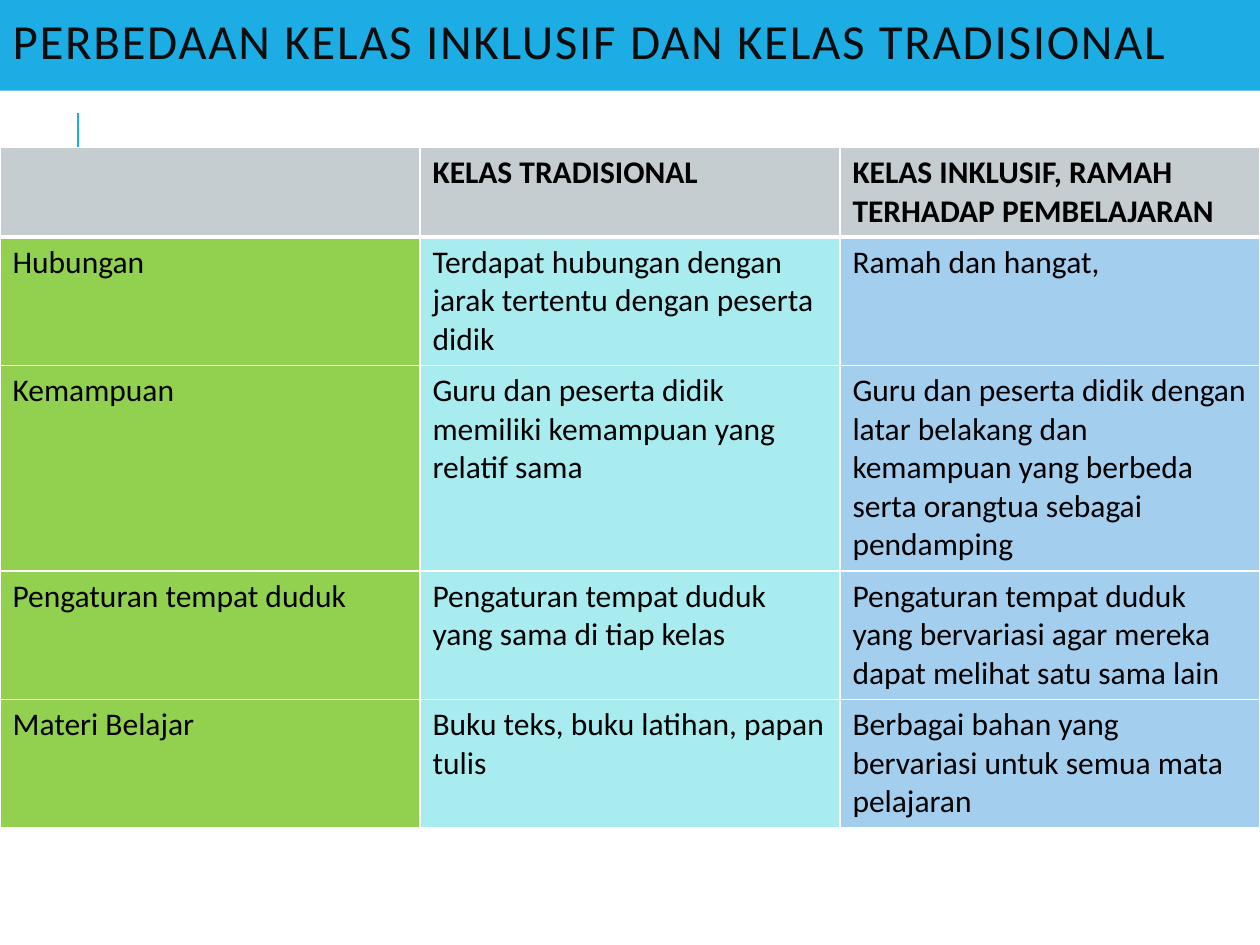
from dataclasses import dataclass

import pptx
import pptx.dml.color
import pptx.enum.shapes
import pptx.enum.text
import pptx.oxml
import pptx.oxml.ns
import pptx.util
from pptx.util import Inches

COLORS = {
    "accent": "1CADE4",
    "title": "0D0D0D",
    "text": "000000",
    "border": "FFFFFF",
    "header": "C6CDD1",
    "aspect": "92D050",
    "traditional": "A8ECEF",
    "inclusive": "A3CEED",
}
FONT = "Calibri"


@dataclass
class Row:
    aspect: str
    traditional: str
    inclusive: str
    height: float
    header: bool = False


ROWS = [
    Row("", "KELAS TRADISIONAL",
        "KELAS INKLUSIF, RAMAH TERHADAP PEMBELAJARAN", 0.71, header=True),
    Row("Hubungan",
        "Terdapat hubungan dengan jarak tertentu dengan peserta didik",
        "Ramah dan hangat,", 1.02),
    Row("Kemampuan",
        "Guru dan peserta didik memiliki kemampuan yang relatif sama",
        "Guru dan peserta didik dengan latar belakang dan kemampuan yang "
        "berbeda serta orangtua sebagai pendamping", 1.63),
    Row("Pengaturan tempat duduk",
        "Pengaturan tempat duduk yang sama di tiap kelas",
        "Pengaturan tempat duduk yang bervariasi agar mereka dapat melihat "
        "satu sama lain", 1.02),
    Row("Materi Belajar",
        "Buku teks, buku latihan, papan tulis",
        "Berbagai bahan yang bervariasi untuk semua mata pelajaran", 1.02),
]
COLUMNS = ("aspect", "traditional", "inclusive")


def rgb(name: str) -> pptx.dml.color.RGBColor:
    return pptx.dml.color.RGBColor.from_string(COLORS[name])


def write(tf, text: str, *, size: float = 18, color: str = "text",
          bold: bool = False, spacing: float = 0, line_spacing: float = 1) -> None:
    p = tf.paragraphs[0]
    p.alignment = pptx.enum.text.PP_ALIGN.LEFT
    p.line_spacing = line_spacing
    r = p.add_run()
    r.text = text
    r.font.name = FONT
    r.font.size = pptx.util.Pt(size)
    r.font.bold = bold
    r.font.color.rgb = rgb(color)
    if spacing:
        r.font._element.set("spc", str(int(spacing * 100)))


def add_borders(cell, bottom: float = 1, top: float = 1) -> None:
    tcPr = cell._tc.get_or_add_tcPr()
    for side, width in (("L", 1), ("R", 1), ("T", top), ("B", bottom)):
        tcPr.append(pptx.oxml.parse_xml(
            f'<a:ln{side} {pptx.oxml.ns.nsdecls("a")} w="{pptx.util.Pt(width)}">'
            f'<a:solidFill><a:srgbClr val="{COLORS["border"]}"/></a:solidFill>'
            f'</a:ln{side}>'))


def add_rule(s, x: float, top: float, bottom: float) -> None:
    line = s.shapes.add_connector(
        pptx.enum.shapes.MSO_CONNECTOR.STRAIGHT,
        Inches(x), Inches(bottom), Inches(x), Inches(top))
    line.line.color.rgb = rgb("accent")
    line.line.width = pptx.util.Pt(1.5)
    line._element.spPr.append(pptx.oxml.parse_xml(
        f'<a:effectLst {pptx.oxml.ns.nsdecls("a")}/>'))


def add_title(s, text: str) -> None:
    sp = s.shapes.title
    sp.left, sp.top, sp.width, sp.height = (
        Inches(v) for v in (0, 0, 10, 0.72))
    sp.fill.solid()
    sp.fill.fore_color.rgb = rgb("accent")
    tf = sp.text_frame
    tf.word_wrap = True
    tf.auto_size = pptx.enum.text.MSO_AUTO_SIZE.NONE
    tf.vertical_anchor = pptx.enum.text.MSO_ANCHOR.MIDDLE
    write(tf, text, size=28, color="title", spacing=1, line_spacing=0.8)


def add_comparison(s, rows: list[Row]) -> None:
    table = s.shapes.add_table(
        len(rows), len(COLUMNS), Inches(0), Inches(1.17), Inches(10),
        Inches(sum(row.height for row in rows))).table
    table.horz_banding = False
    for i, row in enumerate(rows):
        table.rows[i].height = Inches(row.height)
        for j, column in enumerate(COLUMNS):
            cell = table.cell(i, j)
            add_borders(cell, bottom=3 if row.header else 1,
                        top=3 if i == 1 else 1)
            cell.fill.solid()
            cell.fill.fore_color.rgb = rgb("header" if row.header else column)
            text = getattr(row, column)
            if text:
                write(cell.text_frame, text, bold=row.header)


def main() -> None:
    prs = pptx.Presentation()
    prs.slide_width, prs.slide_height = Inches(10), Inches(7.5)
    s = prs.slides.add_slide(prs.slide_layouts[5])

    # Accent rule, partly behind the table
    add_rule(s, 0.62, 0.9, 1.9)

    # Title band
    add_title(s, "PERBEDAAN KELAS INKLUSIF DAN KELAS TRADISIONAL")

    # Comparison table
    add_comparison(s, ROWS)

    prs.save("out.pptx")


if __name__ == "__main__":
    main()
